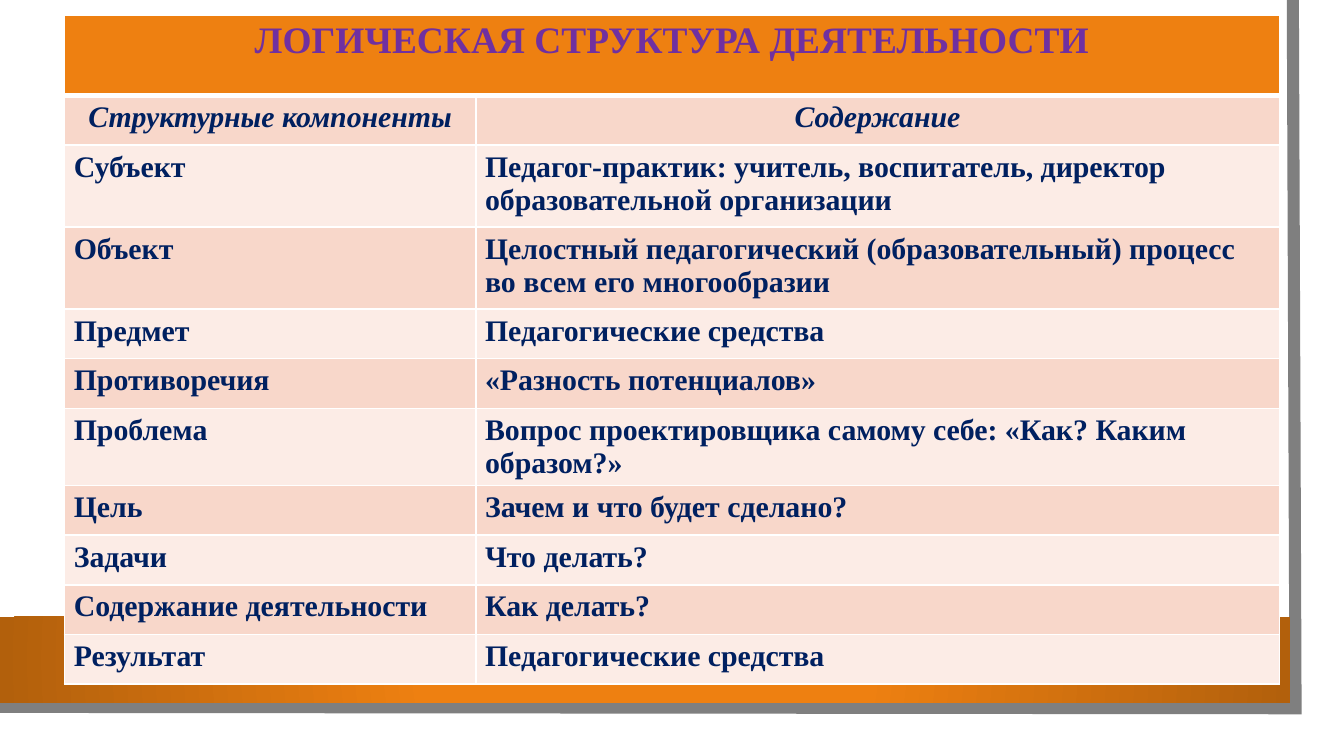
from lxml import etree
from pptx import Presentation
from pptx import util as u
from pptx.dml.color import RGBColor
from pptx.enum import shapes, text
from pptx.oxml import parse_xml
from pptx.oxml.ns import nsdecls, qn
from pptx.util import Inches

WHITE = RGBColor(0xFF, 0xFF, 0xFF)
GRAY = RGBColor(0x7F, 0x7F, 0x7F)
ORANGE = RGBColor(0xEE, 0x80, 0x11)
BROWN = RGBColor(0xB2, 0x60, 0x0C)
PURPLE = RGBColor(0x70, 0x30, 0xA0)
NAVY = RGBColor(0x00, 0x20, 0x60)
PINK = RGBColor(0xF8, 0xD7, 0xCA)
PALE = RGBColor(0xFC, 0xEC, 0xE6)

TITLE = "ЛОГИЧЕСКАЯ СТРУКТУРА ДЕЯТЕЛЬНОСТИ"
COMPONENTS = [
    ("Структурные компоненты", "Содержание"),
    ("Субъект", "Педагог-практик: учитель, воспитатель, директор образовательной организации"),
    ("Объект", "Целостный педагогический (образовательный) процесс во всем его многообразии"),
    ("Предмет", "Педагогические средства"),
    ("Противоречия", "«Разность потенциалов»"),
    ("Проблема", "Вопрос проектировщика самому себе: «Как? Каким образом?»"),
    ("Цель", "Зачем и что будет сделано?"),
    ("Задачи", "Что делать?"),
    ("Содержание деятельности", "Как делать?"),
    ("Результат", "Педагогические средства"),
]
COLUMN_WIDTHS = [3.06, 5.98]
TITLE_HEIGHT, ROW_HEIGHT, TALL_HEIGHT = 0.6, 0.37, 0.61
TALL_COMPONENTS = {"Субъект", "Объект"}


class SlideBuilder:
    """Draws the frame and the table of one slide in a shared style."""

    font = "Times New Roman"

    def __init__(self, slide):
        self.slide = slide

    def edge(self, points, color, width):
        start, *rest = [(Inches(x), Inches(y)) for x, y in points]
        outline = self.slide.shapes.build_freeform(*start)
        outline.add_line_segments(rest, close=False)
        edge = outline.convert_to_shape()
        edge.shadow.inherit = False
        edge.fill.background()
        edge.line.color.rgb = color
        edge.line.width = u.Pt(width)
        etree.SubElement(edge._element.spPr.find(qn("a:ln")), qn("a:miter"), lim="800000")

    def band(self, left, top, width, height, stops):
        band = self.slide.shapes.add_shape(
            shapes.MSO_SHAPE.RECTANGLE,
            Inches(left), Inches(top), Inches(width), Inches(height))
        band.shadow.inherit = False
        band.line.fill.background()
        band.fill.background()
        stop_xml = "".join(
            f'<a:gs pos="{percent * 1000}"><a:srgbClr val="{color}"/></a:gs>'
            for percent, color in stops)
        gradient = parse_xml(
            f'<a:gradFill {nsdecls("a")} rotWithShape="1"><a:gsLst>{stop_xml}</a:gsLst>'
            '<a:path path="circle"><a:fillToRect l="50000" t="50000" r="50000" b="50000"/>'
            '</a:path></a:gradFill>')
        properties = band._element.spPr
        properties.replace(properties.find(qn("a:noFill")), gradient)

    def table(self, left, top, widths, heights):
        frame = self.slide.shapes.add_table(
            len(heights), len(widths), Inches(left), Inches(top),
            Inches(sum(widths)), Inches(sum(heights)))
        for column, width in zip(frame.table.columns, widths):
            column.width = Inches(width)
        for row, height in zip(frame.table.rows, heights):
            row.height = Inches(height)
        return frame.table

    def cell(self, cell, wording, fill, color=NAVY, size=16, italic=False,
             centered=False, bottom=1):
        cell.margin_left = cell.margin_right = Inches(0.07)
        cell.margin_top = cell.margin_bottom = Inches(0.04)
        cell.text_frame.text = wording
        paragraph = cell.text_frame.paragraphs[0]
        paragraph.alignment = text.PP_ALIGN.CENTER if centered else text.PP_ALIGN.LEFT
        for run in paragraph.runs:
            run.font.name = self.font
            run.font.size = u.Pt(size)
            run.font.bold = True
            run.font.italic = italic
            run.font.color.rgb = color
        cell.fill.solid()
        cell.fill.fore_color.rgb = fill
        self.borders(cell, bottom)

    def borders(self, cell, bottom):
        properties = cell._tc.get_or_add_tcPr()
        for place, (side, width) in enumerate(
                [("lnL", 1), ("lnR", 1), ("lnT", 1), ("lnB", bottom)]):
            border = etree.Element(qn(f"a:{side}"), w=str(u.Pt(width)))
            solid = etree.SubElement(border, qn("a:solidFill"))
            etree.SubElement(solid, qn("a:srgbClr"), val=str(WHITE))
            properties.insert(place, border)


def main():
    deck = Presentation()
    deck.slide_width = Inches(10)
    deck.slide_height = deck.slide_width * 9 // 16
    builder = SlideBuilder(deck.slides.add_slide(deck.slide_layouts[6]))

    builder.edge([(9.62, 0), (9.64, 5.27), (-0.02, 5.26)], GRAY, 6.5)
    builder.band(0, 4.59, 9.6, 0.64, [(0, ORANGE), (34, ORANGE), (100, BROWN)])

    heights = [TITLE_HEIGHT] + [
        TALL_HEIGHT if name in TALL_COMPONENTS else ROW_HEIGHT for name, _ in COMPONENTS]
    structure = builder.table(0.48, 0.11, COLUMN_WIDTHS, heights)
    structure.cell(0, 0).merge(structure.cell(0, 1))
    for column, wording in enumerate([TITLE, ""]):
        builder.cell(structure.cell(0, column), wording, ORANGE, PURPLE, 20,
                     centered=True, bottom=3)
    for row, component in enumerate(COMPONENTS, start=1):
        heading = row == 1
        for column, wording in enumerate(component):
            builder.cell(structure.cell(row, column), wording, PINK if row % 2 else PALE,
                         italic=heading, centered=heading)

    deck.save("out.pptx")


if __name__ == "__main__":
    main()
